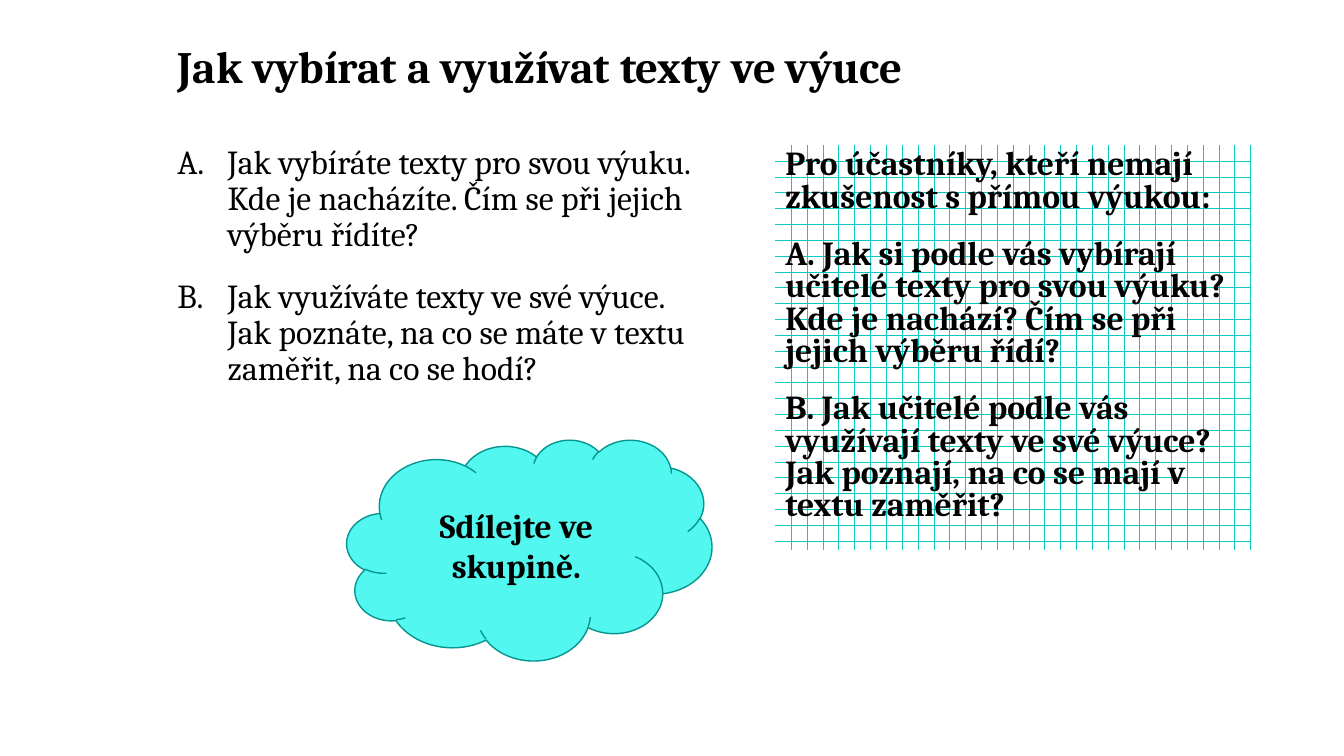
from dataclasses import dataclass

from lxml.etree import SubElement
from pptx import Presentation
from pptx.dml.color import RGBColor
from pptx.enum.dml import MSO_PATTERN
from pptx.enum.shapes import MSO_SHAPE
from pptx.enum.text import MSO_ANCHOR, PP_ALIGN
from pptx.oxml.ns import qn
from pptx.util import Inches, Pt


@dataclass(frozen=True)
class Theme:
    """Colours, font and type sizes of the slide."""
    font: str = "Cambria"
    title_size: int = 32
    text_size: int = 24
    paragraph_gap: int = 18
    ink: RGBColor = RGBColor(0x00, 0x00, 0x00)
    paper: RGBColor = RGBColor(0xFF, 0xFF, 0xFF)
    grid: RGBColor = RGBColor(0x08, 0xCA, 0xC1)
    cloud: RGBColor = RGBColor(0x52, 0xF8, 0xF0)
    cloud_edge: RGBColor = RGBColor(0x06, 0x95, 0x8F)


THEME = Theme()

TITLE = "Jak vybírat a využívat texty ve výuce"
QUESTIONS = [
    "Jak vybíráte texty pro svou výuku. Kde je nacházíte. Čím se při jejich výběru řídíte?",
    "Jak využíváte texty ve své výuce. Jak poznáte, na co se máte v textu zaměřit, "
    "na co se hodí?",
]
NEWCOMER_QUESTIONS = [
    "Pro účastníky, kteří nemají zkušenost s přímou výukou:",
    "A. Jak si podle vás vybírají učitelé texty pro svou výuku? Kde je nachází? "
    "Čím se při jejich výběru řídí?",
    "B. Jak učitelé podle vás využívají texty ve své výuce? Jak poznají, "
    "na co se mají v textu zaměřit?",
]
CALL_TO_SHARE = "Sdílejte ve skupině."


def number_with_letter(paragraph, hang):
    """Number a paragraph A., B., ... with a hanging indent."""
    properties = paragraph._p.get_or_add_pPr()
    properties.set("marL", str(hang))
    properties.set("indent", str(-hang))
    SubElement(properties, qn("a:buFont"), typeface=THEME.font)
    SubElement(properties, qn("a:buAutoNum"), type="alphaUcPeriod")


def write_text(shape, paragraphs, size=THEME.text_size, bold=False, spacing=1.0,
               align=PP_ALIGN.LEFT, anchor=MSO_ANCHOR.TOP, hang=None):
    """Fill a shape with evenly formatted paragraphs."""
    frame = shape.text_frame
    frame.word_wrap = True
    frame.vertical_anchor = anchor
    for index, text in enumerate(paragraphs):
        paragraph = frame.add_paragraph() if index else frame.paragraphs[0]
        paragraph.alignment = align
        paragraph.line_spacing = spacing
        paragraph.space_before = Pt(THEME.paragraph_gap if index else 0)
        if hang:
            number_with_letter(paragraph, hang)
        run = paragraph.add_run()
        run.text = text
        run.font.name = THEME.font
        run.font.size = Pt(size)
        run.font.bold = bold
        run.font.color.rgb = THEME.ink


def add_title(slide, box):
    """Place the slide title at the bottom of its box."""
    write_text(slide.shapes.add_textbox(*box), [TITLE], size=THEME.title_size,
               bold=True, spacing=0.9, anchor=MSO_ANCHOR.BOTTOM)


def add_questions(slide, box):
    """Place the lettered questions for teachers."""
    write_text(slide.shapes.add_textbox(*box), QUESTIONS, spacing=0.9,
               hang=Inches(0.5))


def add_newcomer_panel(slide, box):
    """Place the gridded panel for participants without teaching experience."""
    panel = slide.shapes.add_shape(MSO_SHAPE.RECTANGLE, *box)
    panel.shadow.inherit = False
    panel.line.fill.background()
    panel.fill.patterned()
    panel.fill.pattern = MSO_PATTERN.DOTTED_GRID
    panel.fill.fore_color.rgb = THEME.grid
    panel.fill.back_color.rgb = THEME.paper
    write_text(panel, NEWCOMER_QUESTIONS, bold=True, spacing=0.8)


def add_cloud(slide, box):
    """Place the cloud that invites the group to share."""
    cloud = slide.shapes.add_shape(MSO_SHAPE.CLOUD, *box)
    cloud.shadow.inherit = False
    cloud.fill.solid()
    cloud.fill.fore_color.rgb = THEME.cloud
    cloud.line.color.rgb = THEME.cloud_edge
    cloud.line.width = Pt(1)
    write_text(cloud, [CALL_TO_SHARE], bold=True, align=PP_ALIGN.CENTER,
               anchor=MSO_ANCHOR.MIDDLE)


def box_of(*lengths):
    """Return left, top, width and height given in inches."""
    return tuple(Inches(length) for length in lengths)


def main():
    """Build and save the slide."""
    deck = Presentation()
    deck.slide_width, deck.slide_height = Inches(13.33), Inches(7.5)
    slide = deck.slides.add_slide(deck.slide_layouts[6])
    add_title(slide, box_of(1.66, 0.24, 10.5, 0.73))
    add_questions(slide, box_of(1.66, 1.39, 5.39, 3.17))
    add_newcomer_panel(slide, box_of(7.69, 1.44, 4.72, 4.02))
    add_cloud(slide, box_of(3.44, 4.36, 3.62, 2.19))
    deck.save("out.pptx")


if __name__ == "__main__":
    main()
